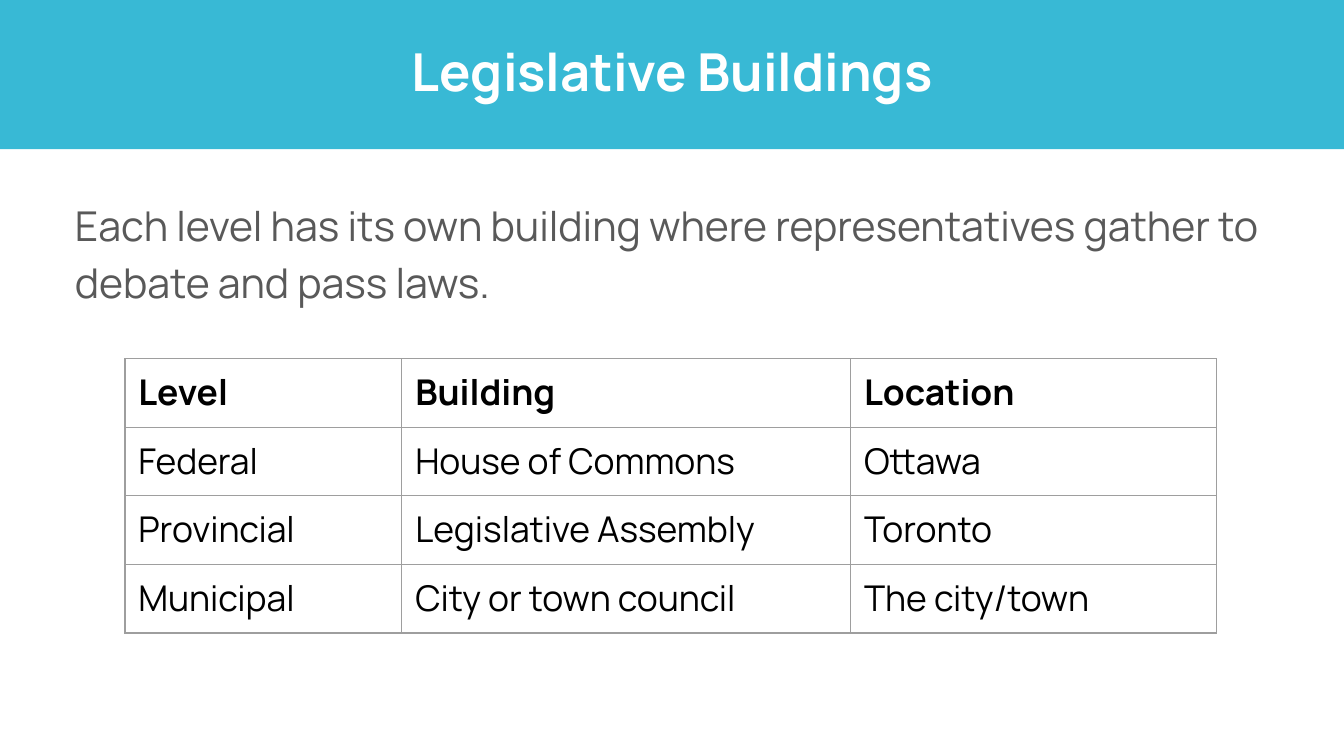
from lxml import etree
from pptx import Presentation
from pptx.dml.color import RGBColor
from pptx.enum.shapes import MSO_SHAPE
from pptx.enum.text import MSO_ANCHOR, PP_ALIGN
from pptx.oxml.ns import qn
from pptx.util import Inches, Pt

RECT = MSO_SHAPE.RECTANGLE
TOP, MIDDLE = MSO_ANCHOR.TOP, MSO_ANCHOR.MIDDLE
LEFT, CENTER = PP_ALIGN.LEFT, PP_ALIGN.CENTER

TITLE = "Legislative Buildings"
INTRO = "Each level has its own building where representatives gather to debate and pass laws."
ROWS = [
    ("Level", "Building", "Location"),
    ("Federal", "House of Commons", "Ottawa"),
    ("Provincial", "Legislative Assembly", "Toronto"),
    ("Municipal", "City or town council", "The city/town"),
]
SLIDE_WIDTH = 10
SLIDE_HEIGHT = SLIDE_WIDTH * 9 / 16
COLUMN_WIDTHS = [2.06, 3.34, 2.72]
ROW_HEIGHT = 0.51
COLORS = {"banner": "38B9D5", "title": "FFFFFF", "intro": "595959",
          "cell": "000000", "border": "9E9E9E"}


def write(tf, text, size, color, bold=False, align=LEFT, spacing=1.0):
    p = tf.paragraphs[0]
    p.alignment, p.line_spacing = align, spacing
    r = p.add_run()
    r.text = text
    for name, value in {"name": "Manrope", "size": Pt(size), "bold": bold}.items():
        setattr(r.font, name, value)
    r.font.color.rgb = RGBColor.from_string(COLORS[color])


def add_borders(cell):
    tcPr = cell._tc.get_or_add_tcPr()
    for i, side in enumerate(("lnL", "lnR", "lnT", "lnB")):
        line = etree.Element(qn(f"a:{side}"), w=str(Pt(0.75)))
        fill = etree.SubElement(line, qn("a:solidFill"))
        etree.SubElement(fill, qn("a:srgbClr"), val=COLORS["border"])
        tcPr.insert(i, line)


prs = Presentation()
prs.slide_width, prs.slide_height = Inches(SLIDE_WIDTH), Inches(SLIDE_HEIGHT)
s = prs.slides.add_slide(prs.slide_layouts[6])

intro = s.shapes.add_textbox(Inches(0.46), Inches(1.39), Inches(9.07), Inches(3.74))
intro.text_frame.word_wrap = True
intro.text_frame.vertical_anchor = TOP
write(intro.text_frame, INTRO, 22, "intro", spacing=1.15)

frame = s.shapes.add_table(len(ROWS), len(COLUMN_WIDTHS), Inches(0.93), Inches(2.67),
                           Inches(sum(COLUMN_WIDTHS)), Inches(ROW_HEIGHT * len(ROWS)))
table = frame.table
table.horz_banding = False
table.first_row = False
for column, width in zip(table.columns, COLUMN_WIDTHS):
    column.width = Inches(width)
for i, row in enumerate(ROWS):
    for j, text in enumerate(row):
        cell = table.cell(i, j)
        cell.fill.background()
        cell.margin_left = cell.margin_right = Inches(0.1)
        cell.margin_top = cell.margin_bottom = Inches(0.07)
        write(cell.text_frame, text, 19, "cell", bold=i == 0)
        add_borders(cell)

banner = s.shapes.add_shape(RECT, 0, 0, prs.slide_width, Inches(1.11))
banner.shadow.inherit = False
banner.fill.solid()
banner.fill.fore_color.rgb = RGBColor.from_string(COLORS["banner"])
banner.line.fill.background()
banner.text_frame.word_wrap = True
banner.text_frame.vertical_anchor = MIDDLE
write(banner.text_frame, TITLE, 28, "title", bold=True, align=CENTER, spacing=0.9)

prs.save("out.pptx")
